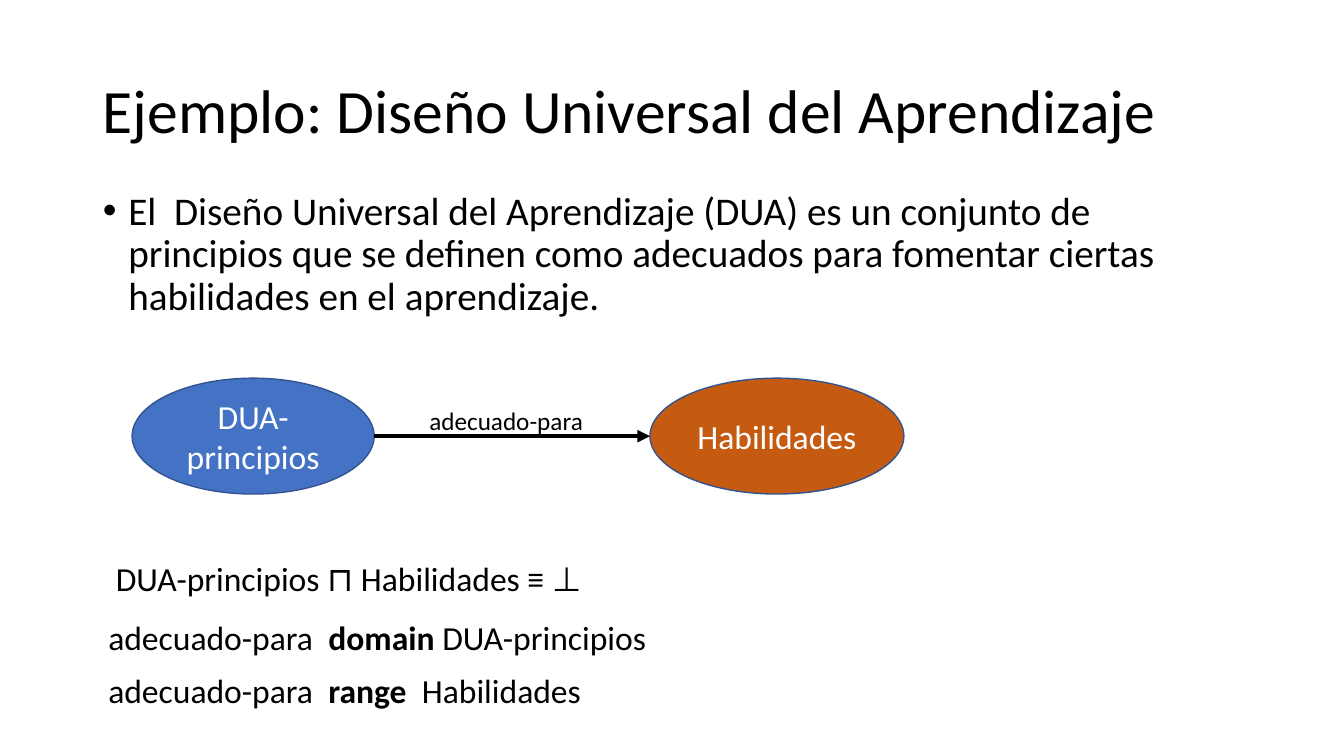
from lxml.etree import SubElement
from pptx import Presentation
from pptx.dml.color import RGBColor
from pptx.enum.shapes import MSO_CONNECTOR, MSO_SHAPE
from pptx.enum.text import MSO_ANCHOR, MSO_AUTO_SIZE, PP_ALIGN
from pptx.oxml.ns import qn
from pptx.util import Cm, Pt

BLACK = RGBColor(0x00, 0x00, 0x00)
WHITE = RGBColor(0xFF, 0xFF, 0xFF)
BLUE = RGBColor(0x44, 0x72, 0xC4)
NAVY = RGBColor(0x32, 0x54, 0x91)
RUST = RGBColor(0xC5, 0x5A, 0x11)


class Sheet:
    """Holds the style and the current slide."""

    face = "Calibri"

    def __init__(self, deck):
        self.slide = deck.slides.add_slide(deck.slide_layouts[1])
        self.shapes = self.slide.shapes

    def style(self, para, size, color=BLACK, align=PP_ALIGN.LEFT):
        para.alignment = align
        font = para.font
        font.name, font.size = self.face, Pt(size)
        font.color.rgb = color

    def holder(self, index, text, box, size, anchor):
        """Fill and move a template placeholder; return its paragraph."""
        item = self.slide.placeholders[index]
        item.left, item.top, item.width, item.height = map(Cm, box)
        frame = item.text_frame
        frame.text = text
        frame.auto_size = MSO_AUTO_SIZE.NONE
        frame.vertical_anchor = anchor
        para = frame.paragraphs[0]
        para.line_spacing = 0.9
        self.style(para, size)
        return para

    def title(self, text, box):
        self.holder(0, text, box, 44, MSO_ANCHOR.MIDDLE)

    def bullet(self, text, box):
        para = self.holder(1, text, box, 28, MSO_ANCHOR.TOP)
        para.space_before = Pt(10)
        props = para._p.get_or_add_pPr()
        props.set("marL", str(Cm(0.64)))
        props.set("indent", str(Cm(-0.64)))

    def oval(self, text, box, fill):
        item = self.shapes.add_shape(MSO_SHAPE.OVAL, *map(Cm, box))
        item.shadow.inherit = False
        item.fill.solid()
        item.fill.fore_color.rgb = fill
        item.line.color.rgb = NAVY
        item.line.width = Pt(1)
        frame = item.text_frame
        frame.text = text
        frame.word_wrap = True
        frame.vertical_anchor = MSO_ANCHOR.MIDDLE
        self.style(frame.paragraphs[0], 24, WHITE, PP_ALIGN.CENTER)
        return item

    def arrow(self, start, end):
        """Join the right side of one oval to the left side of another."""
        mid = start.top + start.height // 2
        link = self.shapes.add_connector(
            MSO_CONNECTOR.STRAIGHT, start.left + start.width, mid, end.left, mid)
        link.line.color.rgb = BLACK
        link.line.width = Pt(3)
        SubElement(link.line._get_or_add_ln(), qn("a:tailEnd"), type="triangle")
        SubElement(link._element.spPr, qn("a:effectLst"))

    def text(self, parts, box, size=24):
        """Add a text box; parts are (words, bold) pairs."""
        frame = self.shapes.add_textbox(*map(Cm, box)).text_frame
        frame.word_wrap = True
        frame.auto_size = MSO_AUTO_SIZE.SHAPE_TO_FIT_TEXT
        para = frame.paragraphs[0]
        self.style(para, size)
        for words, bold in parts:
            run = para.add_run()
            run.text = words
            if bold:
                run.font.bold = True


def main():
    deck = Presentation()
    deck.slide_width, deck.slide_height = Cm(33.87), Cm(19.05)
    sheet = Sheet(deck)

    # Heading and definition
    sheet.title("Ejemplo: Diseño Universal del Aprendizaje",
                (2.34, 1.02, 29.21, 3.68))
    sheet.bullet("El  Diseño Universal del Aprendizaje (DUA) es un conjunto de "
                 "principios que se definen como adecuados para fomentar "
                 "ciertas habilidades en el aprendizaje.",
                 (2.34, 4.7, 29.21, 3.68))

    # Relation diagram
    source = sheet.oval("DUA-principios", (3.33, 9.53, 6.1, 2.92), BLUE)
    target = sheet.oval("Habilidades", (16.38, 9.53, 6.4, 2.92), RUST)
    sheet.arrow(source, target)
    sheet.text([("adecuado-para", False)], (10.57, 10.08, 4.98, 1.02), 18)

    # Axioms
    sheet.text([("DUA-principios ⊓ Habilidades ≡ ⊥", False)],
               (2.67, 13.94, 16.92, 1.27))
    rules = [("domain", " DUA-principios"), ("range", "  Habilidades")]
    for row, (key, value) in enumerate(rules):
        sheet.text([("adecuado-para  ", False), (key, True), (value, False)],
                   (2.48, 15.42 + row * 1.34, 16.3, 1.27))

    deck.save("out.pptx")


if __name__ == "__main__":
    main()
